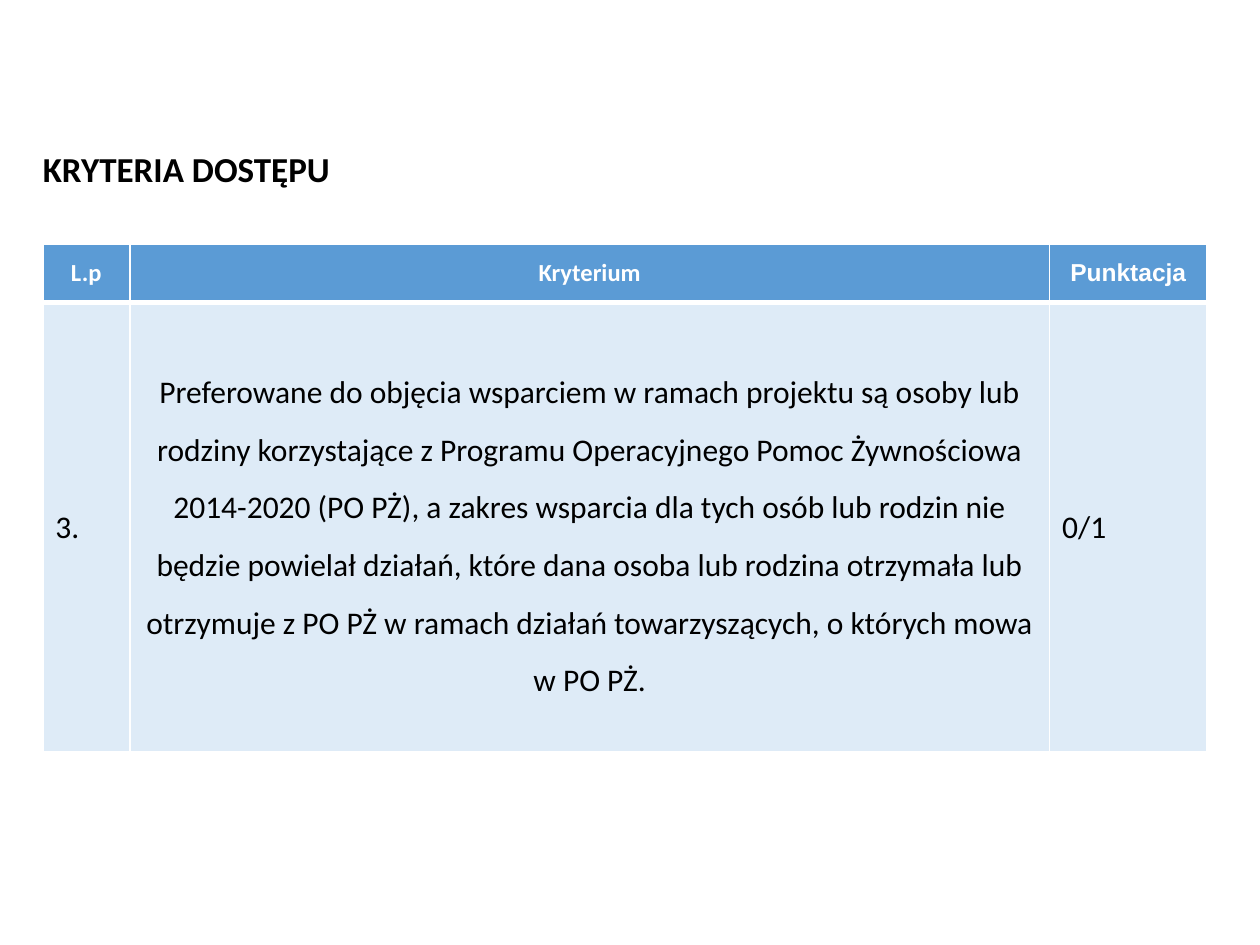
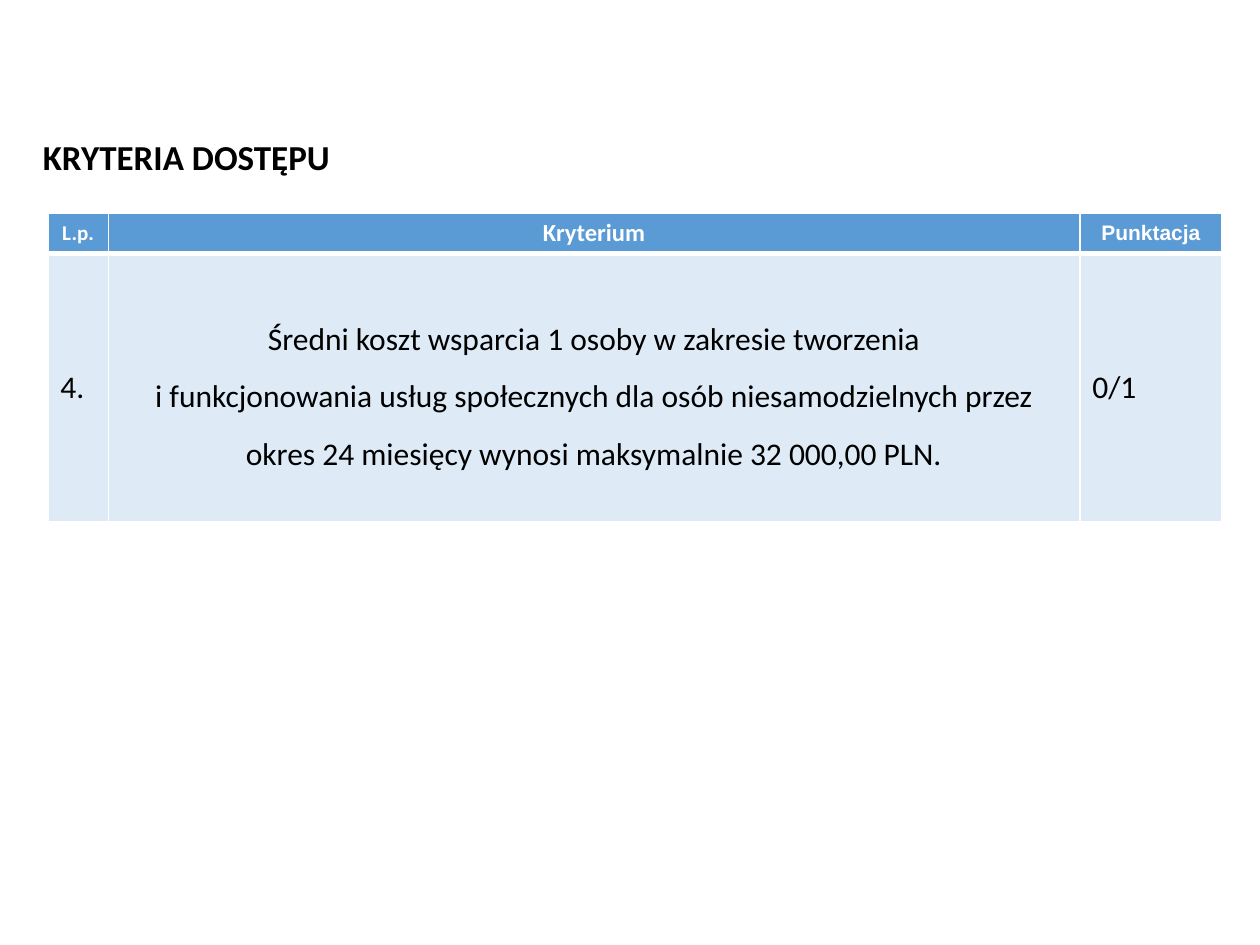
from dataclasses import dataclass

from lxml import etree
from pptx import Presentation
from pptx import util as u
from pptx.dml.color import RGBColor
from pptx.enum import text
from pptx.oxml import ns


@dataclass(frozen=True)
class Theme:
    head: str = "5B9BD5"
    body: str = "DEEBF7"
    white: str = "FFFFFF"
    black: str = "000000"
    font: str = "Calibri"
    alt: str = "Arial"
    title: int = 20
    cell: int = 18
    thin: int = 1
    thick: int = 3


T = Theme()
LEFT, MID = text.PP_ALIGN.LEFT, text.PP_ALIGN.CENTER


def style(par, size, color, bold, align, font=T.font):
    """Format a paragraph and its runs."""
    par.alignment = align
    for run in par.runs:
        run.font.name = font
        run.font.size = u.Pt(size)
        run.font.bold = bold
        run.font.color.rgb = RGBColor.from_string(color)


def add_title(slide, words, top):
    box = slide.shapes.title
    box.left, box.top = u.Inches(0.24), u.Inches(top)
    box.width, box.height = u.Inches(3.7), u.Inches(0.44)
    frame = box.text_frame
    frame.text = words
    frame.word_wrap = True
    frame.auto_size = text.MSO_AUTO_SIZE.SHAPE_TO_FIT_TEXT
    frame.vertical_anchor = text.MSO_ANCHOR.MIDDLE
    style(frame.paragraphs[0], T.title, T.black, True, LEFT)


def add_edges(cell, top, bottom):
    """Draw white borders; top and bottom are widths in points."""
    props = cell._tc.get_or_add_tcPr()
    for side, width in zip("LRTB", (T.thin, T.thin, top, bottom)):
        line = etree.SubElement(props, ns.qn(f"a:ln{side}"), w=str(u.Pt(width)))
        fill = etree.SubElement(line, ns.qn("a:solidFill"))
        etree.SubElement(fill, ns.qn("a:srgbClr"), val=T.white)


def set_cell(cell, words, fill, top, bottom):
    """Fill a cell and return its paragraph."""
    add_edges(cell, top, bottom)
    cell.fill.solid()
    cell.fill.fore_color.rgb = RGBColor.from_string(fill)
    cell.vertical_anchor = text.MSO_ANCHOR.MIDDLE
    cell.margin_top = cell.margin_bottom = u.Inches(0.04)
    par = cell.text_frame.paragraphs[0]
    par.text = words
    return par


def add_grid(slide, left, top, cols, rows, heads, sizes, body):
    """Add a table with one header row and one criterion row."""
    spots = [u.Inches(n) for n in (left, top, sum(cols), sum(rows))]
    grid = slide.shapes.add_table(2, 3, *spots).table
    for col, width in zip(grid.columns, cols):
        col.width = u.Inches(width)
    for row, height in zip(grid.rows, rows):
        row.height = u.Inches(height)

    # Header row
    fonts = (T.font, T.font, T.alt)
    for i, (words, size, font) in enumerate(zip(heads, sizes, fonts)):
        par = set_cell(grid.cell(0, i), words, T.head, T.thin, T.thick)
        style(par, size, T.white, True, MID, font)

    # Criterion row
    for i, (words, align) in enumerate(zip(body, (LEFT, MID, LEFT))):
        par = set_cell(grid.cell(1, i), words, T.body, T.thick, T.thin)
        style(par, T.cell, T.black, False, align)
        if align == MID:
            par.line_spacing = 1.5


def add_page(deck, top, **grid):
    slide = deck.slides.add_slide(deck.slide_layouts[5])
    add_title(slide, "KRYTERIA DOSTĘPU", top)
    add_grid(slide, **grid)


def main():
    deck = Presentation()
    deck.slide_width, deck.slide_height = u.Inches(10), u.Inches(7.5)

    # Criterion 3: food aid programme
    food = (
        "Preferowane do objęcia wsparciem w ramach projektu są osoby lub "
        "rodziny korzystające z Programu Operacyjnego Pomoc Żywnościowa "
        "2014-2020 (PO PŻ), a zakres wsparcia dla tych osób lub rodzin nie "
        "będzie powielał działań, które dana osoba lub rodzina otrzymała lub "
        "otrzymuje z PO PŻ w ramach działań towarzyszących, "
        "o których mowa w PO PŻ."
    )
    slide = deck.slides.add_slide(deck.slide_layouts[5])
    add_title(slide, "KRYTERIA DOSTĘPU", 1.12)
    add_grid(slide, 0.34, 1.94, (0.69, 7.3, 1.25), (0.46, 3.57),
             ("L.p", "Kryterium", "Punktacja"), (14, 14, 14),
             ("3.", food, "0/1"))

    # Criterion 4: cost of support
    cost = (
        "Średni koszt wsparcia 1 osoby w zakresie tworzenia\n"
        "i funkcjonowania usług społecznych dla osób niesamodzielnych przez "
        "okres 24 miesięcy wynosi maksymalnie 32 000,00 PLN."
    )
    slide = deck.slides.add_slide(deck.slide_layouts[5])
    add_title(slide, "KRYTERIA DOSTĘPU", 1.02)
    add_grid(slide, 0.38, 1.69, (0.48, 7.71, 1.13), (0.32, 2.13),
             ("L.p.", "Kryterium", "Punktacja"), (12, 14, 12),
             ("4.", cost, "0/1"))

    deck.save("out.pptx")


if __name__ == "__main__":
    main()
